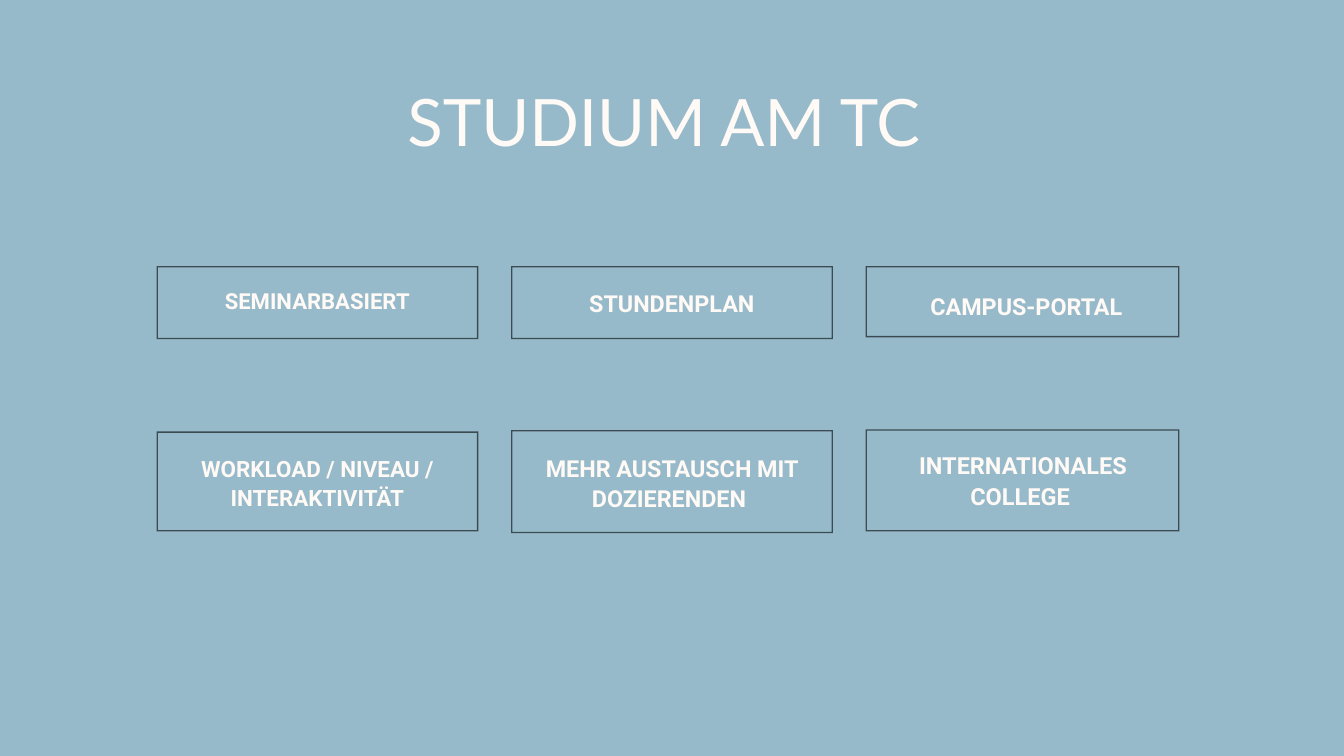
from lxml import etree
from pptx import Presentation
from pptx.dml.color import RGBColor
from pptx.enum.text import MSO_ANCHOR, PP_ALIGN
from pptx.oxml.ns import qn
from pptx.util import Cm, Pt

COLORS = {"background": "97BACB", "frame": "000000", "text": "FFFAF5"}
FRAME_OPACITY = 60
BORDER = 0.05
TEXT_INSET = 0.69
COLUMN_LEFT, COLUMN_PITCH = 5.92, 13.4

# Rows of cards: label, top, width, height, text offset, text width, lines, font size
CARD_ROWS = [
    [
        ("SEMINARBASIERT", 10.06, 12.16, 2.76, 0.74, 10.77, 1, 23.6),
        ("STUNDENPLAN", 10.06, 12.16, 2.76, 0.79, 10.77, 1, 25),
        ("CAMPUS-PORTAL", 10.06, 11.86, 2.69, 0.91, 10.77, 1, 25),
    ],
    [
        ("WORKLOAD / NIVEAU / INTERAKTIVITÄT", 16.31, 12.16, 3.78, 0.79, 10.77, 2, 24),
        ("MEHR AUSTAUSCH MIT DOZIERENDEN ", 16.26, 12.16, 3.89, 0.81, 10.77, 2, 25),
        ("INTERNATIONALES COLLEGE ", 16.23, 11.86, 3.86, 0.74, 10.52, 2, 25.2),
    ],
]


def rgb(name):
    return RGBColor.from_string(COLORS[name])


def add_text(slide, box, text, font, size, spacing, bold=False):
    tf = slide.shapes.add_textbox(*box).text_frame
    tf.word_wrap = True
    tf.vertical_anchor = MSO_ANCHOR.TOP
    tf.margin_left = tf.margin_right = tf.margin_top = tf.margin_bottom = 0
    tf.text = text
    p = tf.paragraphs[0]
    p.alignment = PP_ALIGN.CENTER
    p.line_spacing = Pt(spacing)
    r = p.runs[0]
    r.font.name = font
    r.font.size = Pt(size)
    r.font.bold = bold
    r.font.color.rgb = rgb("text")


def add_frame(slide, left, top, width, height):
    """Draw a thin rectangular ring as an outer and a reversed inner contour."""
    x1, y1, x2, y2 = left, top, left + width, top + height
    b = Cm(BORDER)
    builder = slide.shapes.build_freeform(x1, y1)
    builder.add_line_segments([(x1, y2), (x2, y2), (x2, y1)], close=True)
    builder.move_to(x2 - b, y2 - b)
    builder.add_line_segments(
        [(x1 + b, y2 - b), (x1 + b, y1 + b), (x2 - b, y1 + b)], close=True
    )
    sp = builder.convert_to_shape()
    sp.shadow.inherit = False
    sp.line.fill.background()
    sp.fill.solid()
    sp.fill.fore_color.rgb = rgb("frame")
    color = sp.fill._xPr.find(qn("a:solidFill"))[0]
    etree.SubElement(color, qn("a:alpha"), val=str(FRAME_OPACITY * 1000))


def add_card(slide, box, label, text_offset, text_width, lines, size):
    left, top, width, height = box
    spacing = size * 1.3
    add_frame(slide, left, top, width, height)
    text_box = (
        left + Cm(TEXT_INSET), top + Cm(text_offset),
        Cm(text_width), Pt(lines * spacing),
    )
    add_text(slide, text_box, label, "Roboto", size, spacing, bold=True)


def add_card_row(slide, left, cards):
    for column, (label, top, width, height, *text_layout) in enumerate(cards):
        box = (Cm(left + column * COLUMN_PITCH), Cm(top), Cm(width), Cm(height))
        add_card(slide, box, label, *text_layout)


def main():
    prs = Presentation()
    prs.slide_width, prs.slide_height = Cm(50.8), Cm(28.575)
    slide = prs.slides.add_slide(prs.slide_layouts[6])
    slide.background.fill.solid()
    slide.background.fill.fore_color.rgb = rgb("background")

    # Title
    title_box = (Cm(7.42), Cm(3.12), Cm(35.97), Cm(2.95))
    add_text(slide, title_box, "STUDIUM AM TC ", "Lato", 70, 82.6)

    # Topic cards
    for cards in CARD_ROWS:
        add_card_row(slide, COLUMN_LEFT, cards)

    prs.save("out.pptx")


if __name__ == "__main__":
    main()
